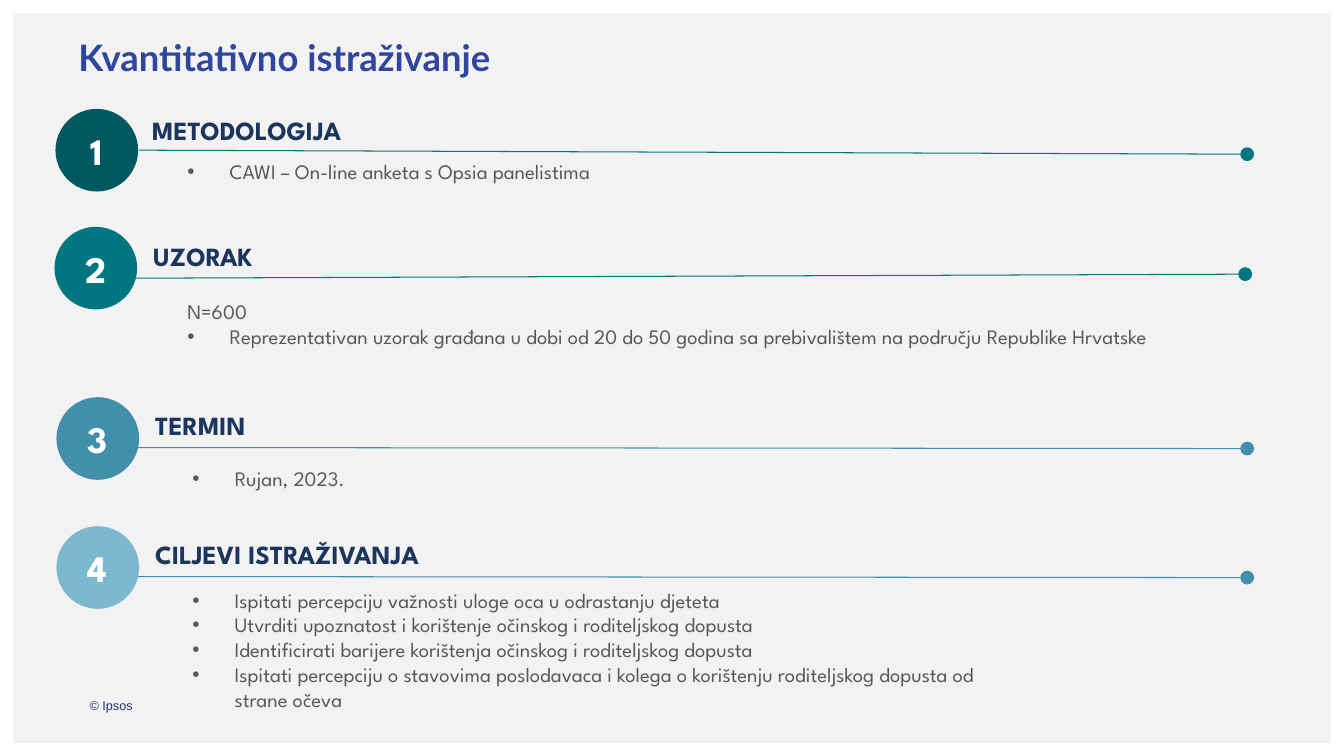
from dataclasses import dataclass

from lxml.etree import SubElement
from pptx import Presentation
from pptx.dml.color import RGBColor as Color
from pptx.enum.shapes import MSO_CONNECTOR as Connector, MSO_SHAPE as Preset
from pptx.enum.text import MSO_ANCHOR as Anchor, MSO_AUTO_SIZE as AutoSize, PP_ALIGN as Align
from pptx.oxml.ns import qn
from pptx.util import Inches, Pt


@dataclass(frozen=True)
class Theme:
    body_font: str = "League Spartan"
    title_font: str = "Lato"
    footer_font: str = "Arial"
    title_size: float = 26
    number_size: float = 26.7
    heading_size: float = 18.7
    body_size: float = 14.7
    footer_size: float = 9
    background: str = "F2F2F2"
    white: str = "FFFFFF"
    title: str = "2F469C"
    heading: str = "1B365D"
    body: str = "58585B"
    footer: str = "233475"
    dark_teal: str = "005861"
    teal: str = "007681"
    blue: str = "418FAB"
    light_blue: str = "7CB9CE"


@dataclass(frozen=True)
class Section:
    heading: str
    circle: tuple  # left, top
    label: tuple  # left, top
    rule: tuple  # start column, start row, end column, end row
    body: tuple  # left, top, width, height
    fill: str
    rule_color: str
    items: tuple
    intro: str = ""


class SlideBuilder:
    """Places elements on a grid whose columns and rows are a tenth of an inch."""

    CELL = Inches(0.1)

    def __init__(self, deck, theme):
        self.theme = theme
        self.page = deck.slides.add_slide(deck.slide_layouts[6])
        fill = self.page.background.fill
        fill.solid()
        fill.fore_color.rgb = Color.from_string(theme.background)

    def grid(self, *cells):
        return [round(cell * self.CELL) for cell in cells]

    def shape(self, preset, area, color):
        shape = self.page.shapes.add_shape(preset, *self.grid(*area))
        shape.shadow.inherit = False
        shape.fill.solid()
        shape.fill.fore_color.rgb = Color.from_string(color)
        shape.line.fill.background()
        return shape

    def style(self, para, font, size, color, bold=False):
        para.font.name = font
        para.font.size = Pt(size)
        para.font.bold = bold
        para.font.color.rgb = Color.from_string(color)

    def insets(self, frame, side, edge):
        frame.margin_left = frame.margin_right = Inches(side)
        frame.margin_top = frame.margin_bottom = Inches(edge)

    def circle(self, position, number, color):
        frame = self.shape(Preset.OVAL, (*position, 8.2, 8.2), color).text_frame
        self.insets(frame, 0, 0)
        frame.vertical_anchor = Anchor.MIDDLE
        para = frame.paragraphs[0]
        para.text = str(number)
        para.alignment = Align.CENTER
        self.style(para, self.theme.body_font, self.theme.number_size, self.theme.white, True)

    def text(self, area, text, font, size, color, bold=False, edge=0):
        frame = self.page.shapes.add_textbox(*self.grid(*area)).text_frame
        frame.word_wrap = True
        frame.vertical_anchor = Anchor.MIDDLE
        self.insets(frame, 0, edge)
        frame.paragraphs[0].text = text
        self.style(frame.paragraphs[0], font, size, color, bold)
        return frame

    def title(self, area, text):
        theme = self.theme
        frame = self.text(area, text, theme.title_font, theme.title_size, theme.title, True)
        self.insets(frame, 0.1, 0.05)
        frame.vertical_anchor = Anchor.TOP
        frame.word_wrap = False
        frame.auto_size = AutoSize.SHAPE_TO_FIT_TEXT

    def bullets(self, area, items, intro):
        frame = self.page.shapes.add_textbox(*self.grid(*area)).text_frame
        frame.word_wrap = True
        lines = ([(intro, False)] if intro else []) + [(item, True) for item in items]
        for index, (text, bulleted) in enumerate(lines):
            para = frame.add_paragraph() if index else frame.paragraphs[0]
            para.text = text
            if bulleted:
                properties = para._p.get_or_add_pPr()
                properties.set("marL", str(Inches(0.42)))
                properties.set("indent", str(-Inches(0.42)))
                SubElement(properties, qn("a:buFont"), typeface="Arial")
                SubElement(properties, qn("a:buChar"), char="•")
            self.style(para, self.theme.body_font, self.theme.body_size, self.theme.body)

    def rule(self, ends, color):
        rule = self.page.shapes.add_connector(Connector.STRAIGHT, *self.grid(*ends))
        rule.line.width = Pt(0.75)
        rule.line.color.rgb = Color.from_string(color)
        SubElement(rule.line._get_or_add_ln(), qn("a:tailEnd"), type="oval", w="lg", len="lg")
        SubElement(rule._element.spPr, qn("a:effectLst"))

    def section(self, number, part):
        theme = self.theme
        self.rule(part.rule, part.rule_color)
        self.circle(part.circle, number, part.fill)
        self.text((*part.label, 56.7, 8.2), part.heading, theme.body_font,
                  theme.heading_size, theme.heading, True)
        self.bullets(part.body, part.items, part.intro)


def main():
    theme = Theme()
    sections = (
        Section("METODOLOGIJA", (5.5, 10.8), (15.1, 8.8), (13.8, 14.9, 123.7, 15.3),
                (17.6, 15.3, 106.1, 11.5), theme.dark_teal, theme.teal,
                ("CAWI – On-line anketa s Opsia panelistima",)),
        Section("UZORAK", (5.4, 22.5), (15.2, 21.3), (13.5, 27.6, 123.5, 27.2),
                (17.6, 29.2, 105.6, 10.5), theme.teal, theme.teal,
                ("Reprezentativan uzorak građana u dobi od 20 do 50 godina "
                 "sa prebivalištem na području Republike Hrvatske",), "N=600"),
        Section("TERMIN", (5.6, 39.4), (15.4, 38.1), (13.5, 44.4, 123.7, 44.5),
                (18.1, 45.7, 106.1, 7), theme.blue, theme.blue, ("Rujan, 2023.",)),
        Section("CILJEVI ISTRAŽIVANJA", (5.6, 52.2), (15.4, 50.9), (13.5, 57.2, 123.7, 57.3),
                (18.1, 57.8, 82.4, 13.5), theme.light_blue, theme.blue,
                ("Ispitati percepciju važnosti uloge oca u odrastanju djeteta",
                 "Utvrditi upoznatost i korištenje očinskog i roditeljskog dopusta",
                 "Identificirati barijere korištenja očinskog i roditeljskog dopusta",
                 "Ispitati percepciju o stavovima poslodavaca i kolega o korištenju "
                 "roditeljskog dopusta od strane očeva")),
    )

    deck = Presentation()
    deck.slide_width, deck.slide_height = Inches(13.33), Inches(7.5)
    builder = SlideBuilder(deck, theme)

    # Footer and white border
    builder.text((8.9, 68, 114.3, 4), "© Ipsos", theme.footer_font,
                 theme.footer_size, theme.footer, edge=0.05)
    border = builder.shape(Preset.FRAME, (0, 0, 133.3, 75), theme.white)
    border.adjustments[0] = 0.017

    # Title and numbered sections
    builder.title((6.8, 3, 49.5, 5.4), "Kvantitativno istraživanje")
    for number, part in enumerate(sections, start=1):
        builder.section(number, part)

    deck.save("out.pptx")


if __name__ == "__main__":
    main()
